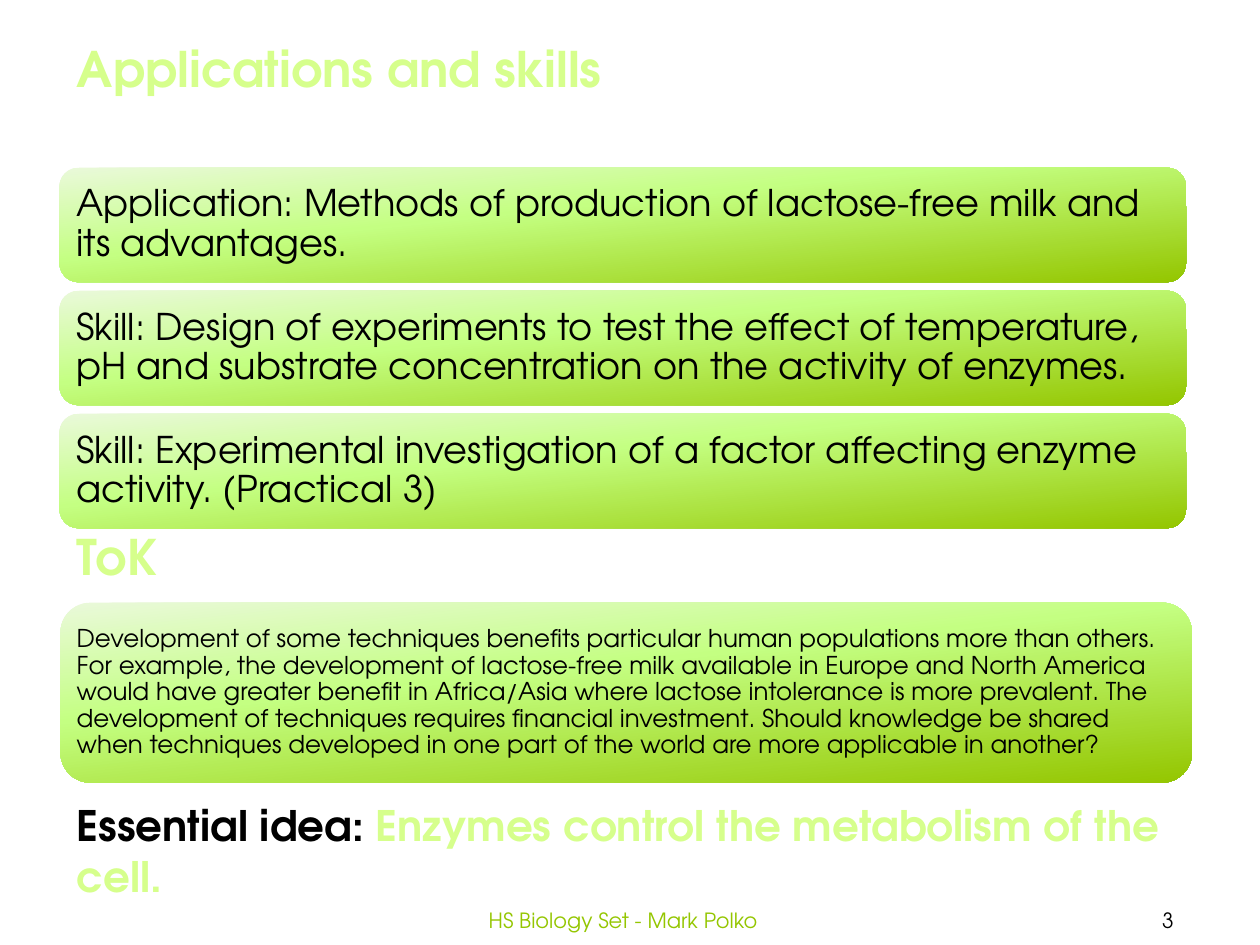
from dataclasses import dataclass

from lxml import etree
from pptx import Presentation
from pptx.dml.color import RGBColor
from pptx.enum.shapes import MSO_SHAPE
from pptx.enum.text import MSO_ANCHOR, MSO_AUTO_SIZE, PP_ALIGN
from pptx.oxml import parse_xml
from pptx.oxml.ns import nsdecls, qn
from pptx.util import Cm, Pt

ROUNDED = MSO_SHAPE.ROUNDED_RECTANGLE
MIDDLE, TOP = MSO_ANCHOR.MIDDLE, MSO_ANCHOR.TOP
LEFT, CENTER = PP_ALIGN.LEFT, PP_ALIGN.CENTER
GROW = MSO_AUTO_SIZE.SHAPE_TO_FIT_TEXT


@dataclass(frozen=True)
class Theme:
    font: str = "TeX Gyre Adventor"
    ink: str = "000000"
    lime: str = "D6FF8C"
    green: str = "94C600"
    outline: str = "434128"
    gradient: tuple = ((0, "EAF9DA"), (40, "C4FF82"), (100, "94C600"))
    gradient_angle: int = 84
    heading_size: int = 28
    idea_size: int = 24
    skill_size: int = 21
    tok_size: int = 14
    footer_size: int = 12


THEME = Theme()

# Content
SKILLS = [
    "Application: Methods of production of lactose-free milk and its advantages.",
    "Skill: Design of experiments to test the effect of temperature, pH and "
    "substrate concentration on the activity of enzymes.",
    "Skill: Experimental investigation of a factor affecting enzyme activity. "
    "(Practical 3)",
]
TOK = (
    "Development of some techniques benefits particular human populations more "
    "than others. For example, the development of lactose-free milk available in "
    "Europe and North America would have greater benefit in Africa/Asia where "
    "lactose intolerance is more prevalent. The development of techniques requires "
    "financial investment. Should knowledge be shared when techniques developed in "
    "one part of the world are more applicable in another?"
)
# Headings: runs of (text, colour), size, (left, top, width, height) in cm
HEADINGS = [
    ([("Applications and skills", THEME.lime)], THEME.heading_size,
     (1.3, 0.66, 12.19, 1.45)),
    ([("ToK", THEME.lime)], THEME.heading_size, (1.3, 10.49, 12.19, 1.45)),
    ([("Essential idea:", THEME.ink),
      (" Enzymes control the metabolism of the cell.", THEME.lime)],
     THEME.idea_size, (1.3, 16, 22.94, 2.31)),
]
FOOTERS = [
    ("3", THEME.ink, (21.69, 18.03, 3.71, 1.02)),
    ("HS Biology Set - Mark Polko", THEME.green, (7.7, 18.03, 9.73, 1.02)),
]
SKILL_BOX = (1.2, 3.38, 22.71, 2.31)
SKILL_STEP = 2.48
TOK_BOX = (1.22, 12.15, 22.81, 3.63)


def add_outline(span):
    """Give the letters a thin dark outline."""
    line = parse_xml(
        f'<a:ln {nsdecls("a")} w="12700"><a:solidFill>'
        f'<a:srgbClr val="{THEME.outline}"/></a:solidFill></a:ln>')
    span.font._element.insert(0, line)


def write(box, runs, size, align=LEFT, anchor=TOP, heading=False):
    frame = box.text_frame
    frame.word_wrap = True
    frame.vertical_anchor = anchor
    para = frame.paragraphs[0]
    para.alignment = align
    for text, color in runs:
        span = para.add_run()
        span.text = text
        span.font.name = THEME.font
        span.font.size = Pt(size)
        span.font.color.rgb = RGBColor.from_string(color)
        if heading:
            span.font.bold = True
            add_outline(span)
    return frame


def fill_gradient(shape):
    shape.fill.gradient()
    shape.fill.gradient_angle = 360 - THEME.gradient_angle
    stops = shape._element.spPr.find(qn("a:gradFill")).find(qn("a:gsLst"))
    for stop in list(stops):
        stops.remove(stop)
    for position, color in THEME.gradient:
        stop = etree.SubElement(stops, qn("a:gs"), pos=str(position * 1000))
        etree.SubElement(stop, qn("a:srgbClr"), val=color)


def add_card(page, text, size, place, inset):
    card = page.shapes.add_shape(ROUNDED, *map(Cm, place))
    card.shadow.inherit = False
    card.line.fill.background()
    fill_gradient(card)
    frame = write(card, [(text, THEME.ink)], size, anchor=MIDDLE)
    frame.margin_left = frame.margin_right = Cm(inset)
    frame.margin_top = frame.margin_bottom = Cm(inset)
    frame.paragraphs[0].line_spacing = 0.9


def main():
    deck = Presentation()
    deck.slide_width, deck.slide_height = Cm(25.4), Cm(19.05)
    page = deck.slides.add_slide(deck.slide_layouts[6])

    # Page number and footer
    for text, color, place in FOOTERS:
        box = page.shapes.add_textbox(*map(Cm, place))
        write(box, [(text, color)], THEME.footer_size, CENTER, MIDDLE)

    # Skill cards, stacked at equal steps
    left, top, width, height = SKILL_BOX
    for row, text in enumerate(SKILLS):
        place = (left, top + row * SKILL_STEP, width, height)
        add_card(page, text, THEME.skill_size, place, 0.23)

    # Headings and essential idea
    for runs, size, place in HEADINGS:
        box = page.shapes.add_textbox(*map(Cm, place))
        write(box, runs, size, heading=True).auto_size = GROW

    # Theory of knowledge card
    add_card(page, TOK, THEME.tok_size, TOK_BOX, 0.15)

    deck.save("out.pptx")


if __name__ == "__main__":
    main()
